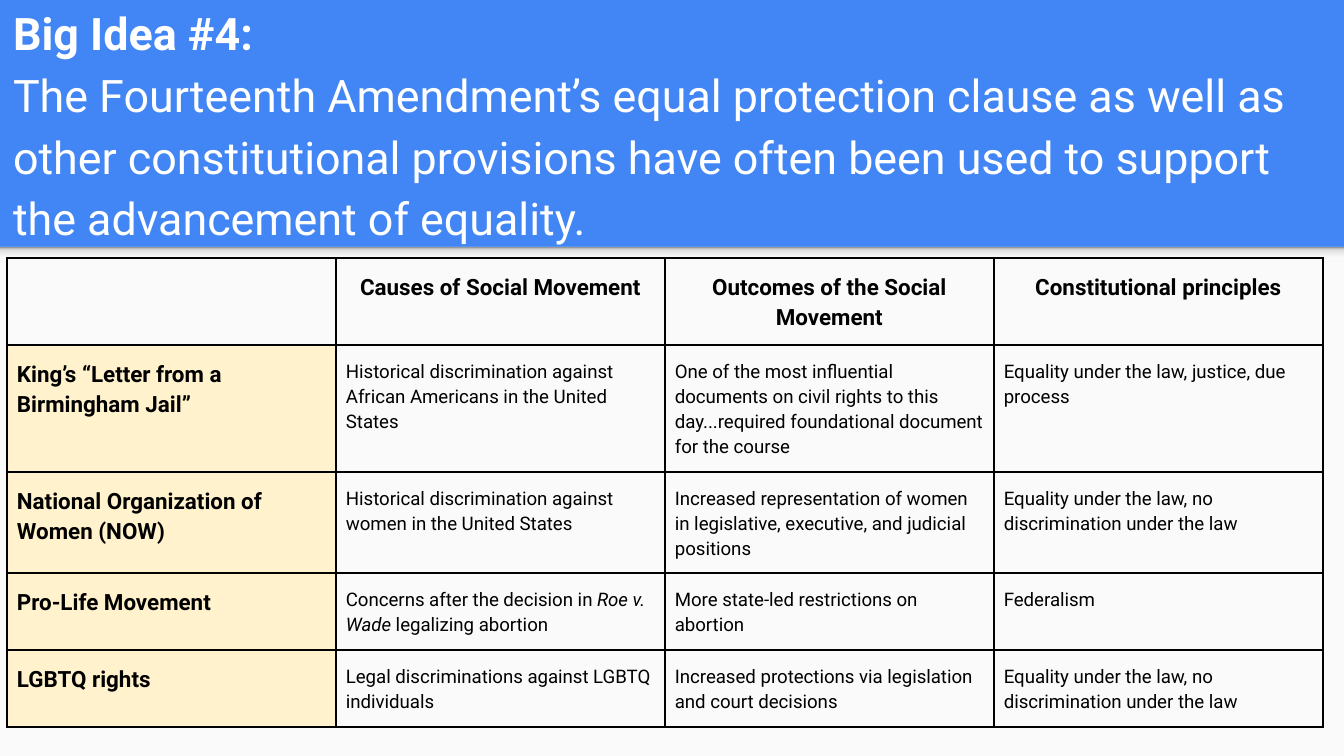
from pptx import Presentation
from pptx.dml.color import RGBColor
from pptx.enum.shapes import MSO_SHAPE as SHAPE
from pptx.enum.text import MSO_ANCHOR as ANCHOR, MSO_AUTO_SIZE as AUTO, PP_ALIGN as ALIGN
from pptx.oxml import parse_xml
from pptx.oxml.ns import nsdecls
from pptx.util import Emu, Pt

SLIDE_W, SLIDE_H = 1344, 756
EMU_PER_PX = 914400 / 134.4
FONT = "Roboto"
LINE_SPACING = 1.15

BLUE = RGBColor(0x42, 0x85, 0xF4)
PAPER = RGBColor(0xFA, 0xFA, 0xFA)
CREAM = RGBColor(0xFF, 0xF2, 0xCC)
WHITE = RGBColor(0xFF, 0xFF, 0xFF)
BLACK = RGBColor(0, 0, 0)

PANEL_TOP = 247
SHADE_STOPS = [(0, "F9F9F9"), (36, "F9F9F9"), (80, "DEDEDE"), (100, "999999")]

TITLE = [
    ("Big Idea #4:", True),
    ("The Fourteenth Amendment’s equal protection clause as well as other "
     "constitutional provisions have often been used to support the "
     "advancement of equality.", False),
]

# Text between asterisks is italic
ROWS = [
    ["", "Causes of Social Movement", "Outcomes of the Social Movement",
     "Constitutional principles"],
    ["King’s “Letter from a Birmingham Jail”",
     "Historical discrimination against African Americans in the United States",
     "One of the most influential documents on civil rights to this "
     "day...required foundational document for the course",
     "Equality under the law, justice, due process"],
    ["National Organization of Women (NOW)",
     "Historical discrimination against women in the United States",
     "Increased representation of women in legislative, executive, and "
     "judicial positions",
     "Equality under the law, no discrimination under the law"],
    ["Pro-Life Movement",
     "Concerns after the decision in *Roe v. Wade* legalizing abortion",
     "More state-led restrictions on abortion",
     "Federalism"],
    ["LGBTQ rights",
     "Legal discriminations against LGBTQ individuals",
     "Increased protections via legislation and court decisions",
     "Equality under the law, no discrimination under the law"],
]
COL_W = 329
ROW_H = [87, 127, 101, 77, 77]


def px(n):
    return Emu(round(n * EMU_PER_PX))


def style(p, size, color, bold, align=ALIGN.LEFT):
    p.alignment = align
    p.line_spacing = LINE_SPACING
    p.space_before = p.space_after = Pt(0)
    f = p.font
    f.name, f.size, f.bold = FONT, Pt(size), bold
    f.color.rgb = color


def set_insets(box, x, y):
    box.margin_left = box.margin_right = px(x)
    box.margin_top = box.margin_bottom = px(y)


def add_band(s, top, height):
    sp = s.shapes.add_shape(SHAPE.RECTANGLE, 0, px(top), px(SLIDE_W), px(height))
    sp.shadow.inherit = False
    sp.line.fill.background()
    return sp


def add_panel(s):
    panel = add_band(s, PANEL_TOP, SLIDE_H - PANEL_TOP)
    panel.fill.solid()
    panel.fill.fore_color.rgb = PAPER

    # Soft shade under the blue header, darkest at its top edge
    shade = add_band(s, PANEL_TOP, 16)
    stops = "".join(f'<a:gs pos="{pos * 1000}"><a:srgbClr val="{color}"/></a:gs>'
                    for pos, color in SHADE_STOPS)
    shade.line._get_or_add_ln().addprevious(parse_xml(
        f'<a:gradFill {nsdecls("a")}><a:gsLst>{stops}</a:gsLst>'
        '<a:lin ang="16200000" scaled="0"/></a:gradFill>'))


def fill_title(s):
    sp = s.shapes.title
    sp.left, sp.top, sp.width, sp.height = px(0), px(145), px(1316), px(113)
    tf = sp.text_frame
    tf.word_wrap = True
    tf.auto_size = AUTO.NONE
    tf.vertical_anchor = ANCHOR.BOTTOM
    set_insets(tf, 13, 13)
    tf.text = "\n".join(text for text, _ in TITLE)
    for p, (_, bold) in zip(tf.paragraphs, TITLE):
        style(p, 24, WHITE, bold)
    # Bring the title in front of the panel
    sp.element.getparent().append(sp.element)


def add_borders(cell):
    tc_pr = cell._tc.get_or_add_tcPr()
    for side in "LRTB":
        tc_pr.append(parse_xml(
            f'<a:ln{side} {nsdecls("a")} w="{Pt(1)}"><a:solidFill>'
            f'<a:srgbClr val="{BLACK}"/></a:solidFill></a:ln{side}>'))


def fill_cell(cell, text, header, label):
    add_borders(cell)
    if label and not header:
        cell.fill.solid()
        cell.fill.fore_color.rgb = CREAM
    else:
        cell.fill.background()
    set_insets(cell, 10, 13)
    cell.vertical_anchor = ANCHOR.TOP
    strong = header or label
    p = cell.text_frame.paragraphs[0]
    style(p, 12 if strong else 10, BLACK, strong,
          ALIGN.CENTER if header else ALIGN.LEFT)
    for i, part in enumerate(text.split("*")):
        if part:
            r = p.add_run()
            r.text = part
            if i % 2:
                r.font.italic = True


def add_movements_table(s):
    n_cols = len(ROWS[0])
    table = s.shapes.add_table(len(ROWS), n_cols, px(7), px(258),
                               px(COL_W * n_cols), px(sum(ROW_H))).table
    table.first_row = table.horz_banding = False
    for col in table.columns:
        col.width = px(COL_W)
    for i, texts in enumerate(ROWS):
        table.rows[i].height = px(ROW_H[i])
        for j, text in enumerate(texts):
            fill_cell(table.cell(i, j), text, header=i == 0, label=j == 0)


def main():
    prs = Presentation()
    prs.slide_width, prs.slide_height = px(SLIDE_W), px(SLIDE_H)
    s = prs.slides.add_slide(prs.slide_layouts[5])
    s.background.fill.solid()
    s.background.fill.fore_color.rgb = BLUE
    add_panel(s)
    fill_title(s)
    add_movements_table(s)
    prs.save("out.pptx")


if __name__ == "__main__":
    main()
